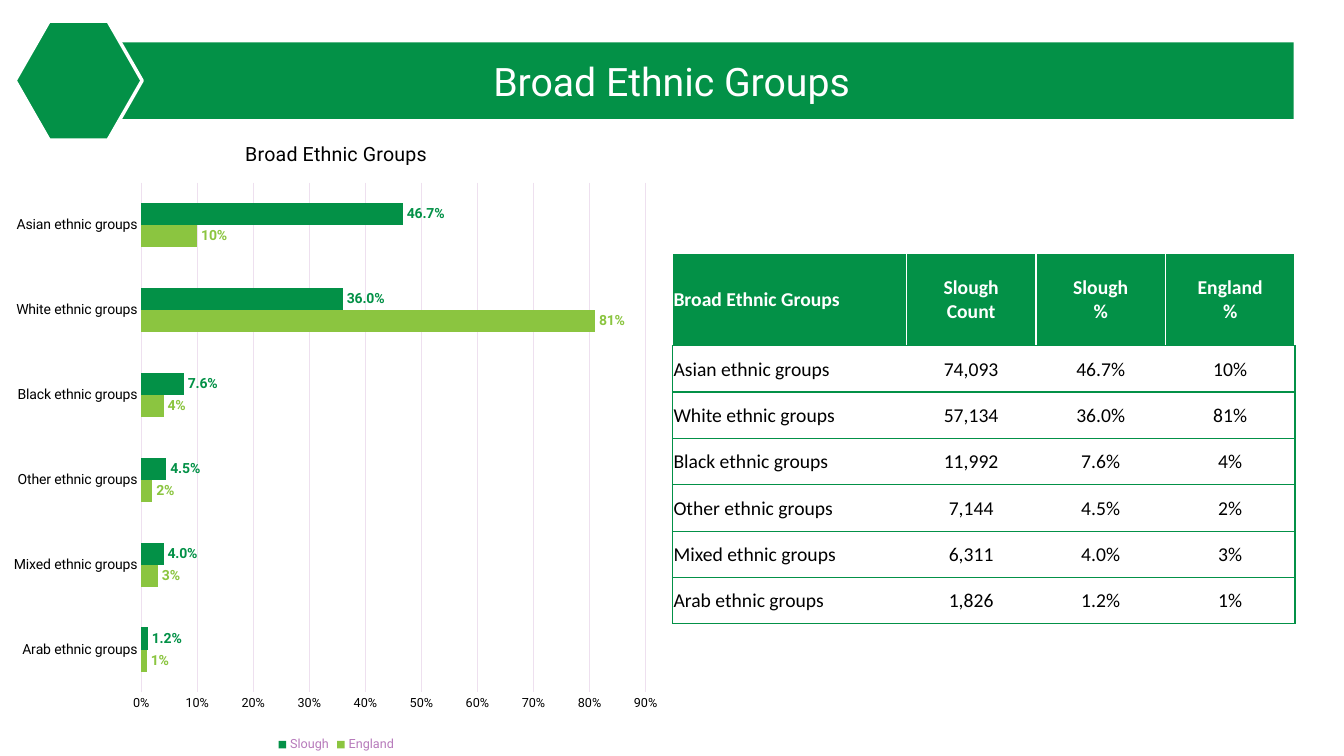
from lxml.etree import SubElement
from pptx import Presentation
from pptx.chart.data import CategoryChartData
from pptx.dml.color import RGBColor
from pptx.enum.chart import XL_CHART_TYPE, XL_LABEL_POSITION, XL_LEGEND_POSITION, XL_TICK_MARK
from pptx.enum.shapes import MSO_SHAPE
from pptx.enum.text import MSO_ANCHOR, PP_ALIGN
from pptx.oxml import parse_xml
from pptx.oxml.ns import nsdecls, qn
from pptx.util import Inches, Pt

GREEN, LIME, WHITE, BLACK = "039147", "8BC540", "FFFFFF", "000000"
GRID, MAUVE = "EEE0EF", "B77ABB"
HEADING = "Broad Ethnic Groups"
HEADER = [HEADING, "Slough\nCount", "Slough\n%", "England\n%"]
GROUPS = [
    ("Asian ethnic groups", 74093, 0.467, 0.10),
    ("White ethnic groups", 57134, 0.36, 0.81),
    ("Black ethnic groups", 11992, 0.076, 0.04),
    ("Other ethnic groups", 7144, 0.045, 0.02),
    ("Mixed ethnic groups", 6311, 0.04, 0.03),
    ("Arab ethnic groups", 1826, 0.012, 0.01),
]


def rgb(colour):
    """Turn a hex string into a colour."""
    return RGBColor.from_string(colour)


def style_font(font, size, colour, name="Roboto", bold=False):
    """Set the look of a font."""
    font.size, font.name, font.bold = Pt(size), name, bold
    font.color.rgb = rgb(colour)


def style_line(line, colour, width):
    """Set the colour and width of a line."""
    line.color.rgb = rgb(colour)
    line.width = Pt(width)


def add_block(slide, preset, left, top, width, height):
    """Add a green preset shape without an outline."""
    block = slide.shapes.add_shape(preset, Inches(left), Inches(top), Inches(width), Inches(height))
    block.shadow.inherit = False
    block.fill.solid()
    block.fill.fore_color.rgb = rgb(GREEN)
    block.line.fill.background()
    return block


def add_banner(slide):
    """Add the heading bar."""
    banner = add_block(slide, MSO_SHAPE.RECTANGLE, 0.49, 0.42, 12.34, 0.76)
    frame = banner.text_frame
    frame.text = HEADING
    frame.vertical_anchor = MSO_ANCHOR.MIDDLE
    frame.paragraphs[0].alignment = PP_ALIGN.CENTER
    style_font(frame.paragraphs[0].runs[0].font, 28, WHITE)


def add_hexagon(slide):
    """Add the hexagon at the left end of the heading bar."""
    hexagon = add_block(slide, MSO_SHAPE.HEXAGON, 0.15, 0.21, 1.26, 1.18)
    hexagon.adjustments[0] = 0.286
    style_line(hexagon.line, WHITE, 2.5)


def place_plot(chart, x, y, w, h):
    """Fix the inner plot area as fractions of the chart."""
    plot_area = chart.plots[0]._element.getparent()
    for layout in plot_area.findall(qn("c:layout")):
        plot_area.remove(layout)
    sizes = "".join(f'<c:{key} val="{value}"/>' for key, value in zip("xywh", (x, y, w, h)))
    plot_area.insert(0, parse_xml(
        f'<c:layout {nsdecls("c")}><c:manualLayout><c:layoutTarget val="inner"/>'
        f'<c:xMode val="edge"/><c:yMode val="edge"/>{sizes}</c:manualLayout></c:layout>'))


def style_series(series, colour, number_format):
    """Colour a series and its value labels."""
    series.format.fill.solid()
    series.format.fill.fore_color.rgb = rgb(colour)
    labels = series.data_labels
    labels.show_value = True
    labels.position = XL_LABEL_POSITION.OUTSIDE_END
    labels.number_format, labels.number_format_is_linked = number_format, False
    style_font(labels.font, 10, colour, bold=True)


def style_axes(chart):
    """Format both axes and the gridlines."""
    groups, share = chart.category_axis, chart.value_axis
    for axis, size in ((groups, 10), (share, 9)):
        axis.major_tick_mark = axis.minor_tick_mark = XL_TICK_MARK.NONE
        style_font(axis.tick_labels.font, size, BLACK)
    style_line(groups.format.line, GRID, 0.75)
    share.format.line.fill.background()
    style_line(share.major_gridlines.format.line, GRID, 0.75)
    share.minimum_scale, share.maximum_scale, share.major_unit = 0, 0.9, 0.1
    share.tick_labels.number_format = "0%"
    share.tick_labels.number_format_is_linked = False


def add_share_chart(slide):
    """Add the bar chart comparing Slough with England."""
    names, _, slough, england = zip(*reversed(GROUPS))
    data = CategoryChartData()
    data.categories = names
    data.add_series("England", england)
    data.add_series("Slough", slough)
    chart = slide.shapes.add_chart(
        XL_CHART_TYPE.BAR_CLUSTERED, Inches(0), Inches(1.18), Inches(6.67), Inches(6.32), data).chart
    style_font(chart.font, 10, "814485")
    chart.has_title = True
    chart.chart_title.text_frame.text = HEADING
    style_font(chart.chart_title.text_frame.paragraphs[0].runs[0].font, 14, BLACK)
    chart.has_legend = True
    chart.legend.position = XL_LEGEND_POSITION.BOTTOM
    chart.legend.include_in_layout = False
    style_font(chart.legend.font, 9, MAUVE)
    bars = chart.plots[0]
    bars.gap_width, bars.overlap, bars.vary_by_categories = 182, 0, False
    for series, colour, number_format in zip(bars.series, (LIME, GREEN), ("0%", "0.0%")):
        style_series(series, colour, number_format)
    style_axes(chart)
    place_plot(chart, 0.21, 0.1, 0.75, 0.8)


def add_borders(cell, borders):
    """Draw 1 pt cell borders, given by side in L, R, T, B order."""
    properties = cell._tc.get_or_add_tcPr()
    for side, colour in borders.items():
        line = SubElement(properties, qn(f"a:ln{side}"), w=str(Pt(1)))
        SubElement(SubElement(line, qn("a:solidFill")), qn("a:srgbClr"), val=colour)


def fill_cell(cell, text, is_header, column):
    """Write one table cell and format it."""
    cell.text_frame.text = text
    cell.vertical_anchor = MSO_ANCHOR.MIDDLE
    cell.margin_left = cell.margin_right = cell.margin_top = Inches(0.01)
    cell.margin_bottom = 0
    for paragraph in cell.text_frame.paragraphs:
        paragraph.alignment = PP_ALIGN.CENTER if column else PP_ALIGN.LEFT
        style_font(paragraph.runs[0].font, 14, WHITE if is_header else BLACK, "Calibri", is_header)
    if is_header:
        borders = dict.fromkeys("LRTB", WHITE)
    else:
        borders = {"L": WHITE if column else GREEN,
                   "R": GREEN if column == len(HEADER) - 1 else WHITE,
                   "T": GREEN, "B": GREEN}
    add_borders(cell, borders)
    cell.fill.solid()
    cell.fill.fore_color.rgb = rgb(GREEN if is_header else WHITE)


def add_count_table(slide):
    """Add the table of counts and shares."""
    rows = [HEADER] + [(name, f"{count:,}", f"{slough:.1%}", f"{england:.0%}")
                       for name, count, slough, england in GROUPS]
    table = slide.shapes.add_table(
        len(rows), len(HEADER), Inches(6.67), Inches(2.51), Inches(6.17), Inches(3.67)).table
    table.horz_banding = False
    for column, width in zip(table.columns, (2.32, 1.285, 1.285, 1.285)):
        column.width = Inches(width)
    for row_index, texts in enumerate(rows):
        table.rows[row_index].height = Inches(0.46 if row_index else 0.92)
        for column_index, text in enumerate(texts):
            fill_cell(table.cell(row_index, column_index), text, row_index == 0, column_index)


def main():
    """Build the slide and save it."""
    deck = Presentation()
    deck.slide_width, deck.slide_height = Inches(13.33), Inches(7.5)
    slide = deck.slides.add_slide(deck.slide_layouts[6])
    add_banner(slide)
    add_share_chart(slide)
    add_count_table(slide)
    add_hexagon(slide)
    deck.save("out.pptx")


if __name__ == "__main__":
    main()
